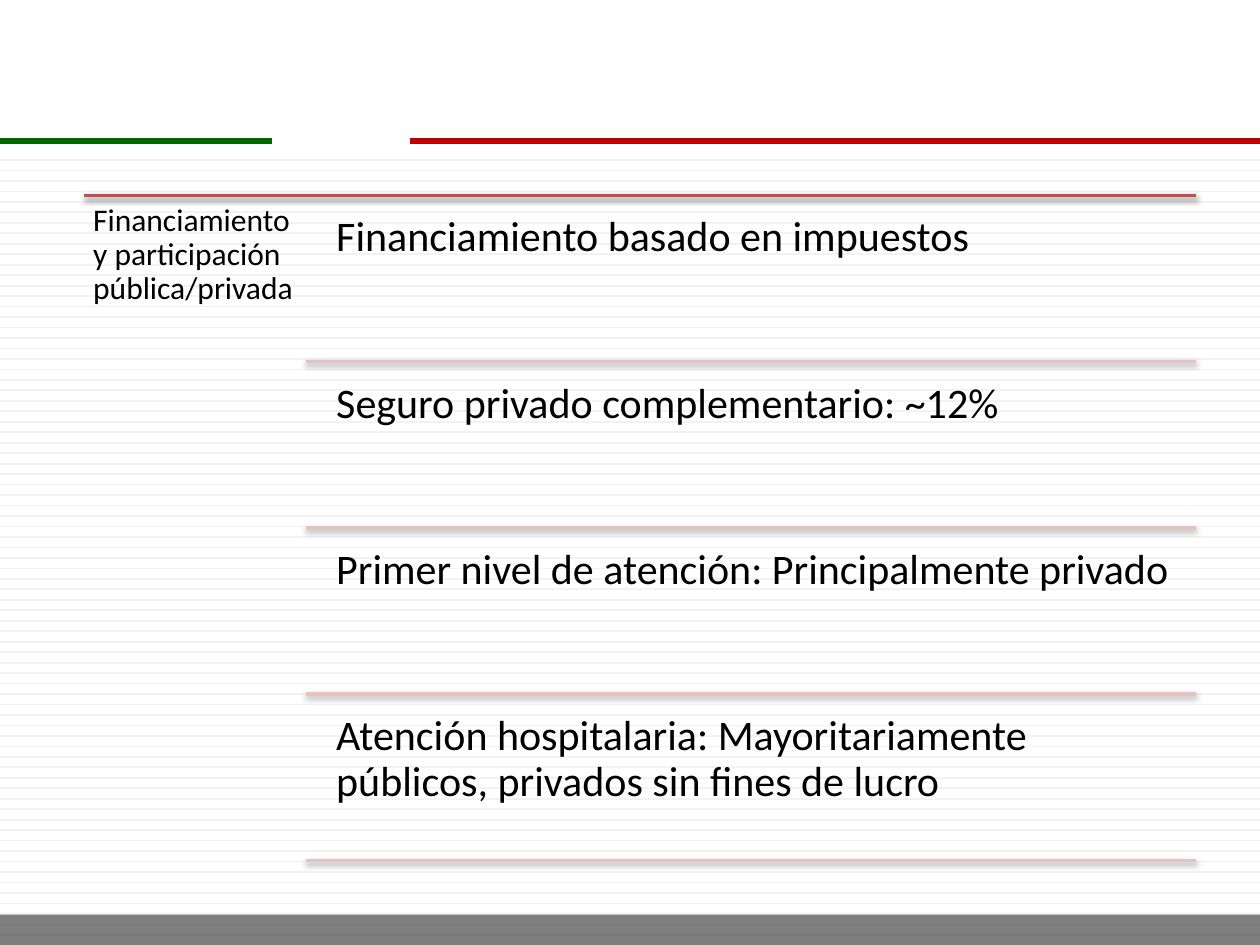
from dataclasses import dataclass

import pptx
import pptx.dml.color
import pptx.enum.shapes
import pptx.enum.text
import pptx.oxml
import pptx.oxml.ns
import pptx.util
from pptx.util import Inches


@dataclass(frozen=True)
class Theme:
    font: str = "Calibri"
    text: str = "000000"
    stripe: str = "F2F2F2"
    green: str = "006600"
    red: str = "C00000"
    top_rule: str = "C0504D"
    row_rule: str = "E2C2C2"
    label_size: int = 18
    row_size: int = 24


THEME = Theme()
SLIDE_WIDTH, SLIDE_HEIGHT = 10, 7.5
STRIPE_COUNT, FIRST_STRIPE, LAST_STRIPE = 75, 1.27, 7.42
TABLE_LEFT, TABLE_RIGHT, TABLE_TOP = 0.67, 9.49, 1.55
RULE_LEFT, ROW_LEFT = 2.43, 2.57
ROW_PITCH, ROW_HEIGHT, ROW_GAP = 1.32, 1.26, 0.06

LABEL = "Financiamiento y participación pública/privada"
ROWS = [
    "Financiamiento basado en impuestos",
    "Seguro privado complementario: ~12%",
    "Primer nivel de atención: Principalmente privado",
    "Atención hospitalaria: Mayoritariamente públicos, privados sin fines de lucro",
]

NAMESPACE = pptx.oxml.ns.nsdecls("a")
NO_EFFECT = f"<a:effectLst {NAMESPACE}/>"
SOFT_SHADOW = (
    f'<a:effectLst {NAMESPACE}>'
    '<a:outerShdw blurRad="40000" dist="20000" dir="5400000" rotWithShape="0">'
    '<a:srgbClr val="000000"><a:alpha val="38000"/></a:srgbClr>'
    '</a:outerShdw></a:effectLst>'
)


def rgb(color):
    return pptx.dml.color.RGBColor.from_string(color)


def add_rule(slide, left, right, top, color, width, effect=NO_EFFECT):
    """Draw a horizontal line."""
    rule = slide.shapes.add_connector(
        pptx.enum.shapes.MSO_CONNECTOR.STRAIGHT,
        Inches(left), Inches(top), Inches(right), Inches(top))
    rule.line.color.rgb = rgb(color)
    rule.line.width = pptx.util.Pt(width)
    rule._element.spPr.append(pptx.oxml.parse_xml(effect))


def add_text(slide, text, left, top, width, height, size, inset):
    box = slide.shapes.add_textbox(
        Inches(left), Inches(top), Inches(width), Inches(height))
    frame = box.text_frame
    frame.word_wrap = True
    frame.vertical_anchor = pptx.enum.text.MSO_ANCHOR.TOP
    frame.margin_left = frame.margin_right = Inches(inset)
    frame.margin_top = frame.margin_bottom = Inches(inset)
    frame.text = text
    paragraph = frame.paragraphs[0]
    paragraph.line_spacing = 0.9
    font = paragraph.runs[0].font
    font.name = THEME.font
    font.size = pptx.util.Pt(size)
    font.color.rgb = rgb(THEME.text)


def add_footer_band(slide):
    height = 0.24
    band = slide.shapes.add_shape(
        pptx.enum.shapes.MSO_SHAPE.RECTANGLE,
        0, Inches(SLIDE_HEIGHT - height), Inches(SLIDE_WIDTH), Inches(height))
    band.shadow.inherit = False
    band.line.fill.background()
    band.fill.solid()
    band.fill.fore_color.rgb = rgb(THEME.text)
    color = band._element.spPr.find(".//" + pptx.oxml.ns.qn("a:srgbClr"))
    color.append(pptx.oxml.parse_xml(f'<a:alpha {NAMESPACE} val="50000"/>'))


def add_background(slide):
    pitch = (LAST_STRIPE - FIRST_STRIPE) / (STRIPE_COUNT - 1)
    for index in range(STRIPE_COUNT):
        add_rule(slide, 0, SLIDE_WIDTH, FIRST_STRIPE + index * pitch, THEME.stripe, 1)
    add_footer_band(slide)
    add_rule(slide, 0, 2.16, 1.12, THEME.green, 3)
    add_rule(slide, 3.25, SLIDE_WIDTH, 1.12, THEME.red, 3)


def add_row(slide, index, text):
    top = TABLE_TOP + index * ROW_PITCH
    add_text(slide, text, ROW_LEFT, top + ROW_GAP, TABLE_RIGHT - ROW_LEFT,
             ROW_HEIGHT, THEME.row_size, 0.1)
    add_rule(slide, RULE_LEFT, TABLE_RIGHT, top + ROW_PITCH,
             THEME.row_rule, 2, SOFT_SHADOW)


def main():
    presentation = pptx.Presentation()
    presentation.slide_width = Inches(SLIDE_WIDTH)
    presentation.slide_height = Inches(SLIDE_HEIGHT)
    slide = presentation.slides.add_slide(presentation.slide_layouts[6])
    add_background(slide)
    add_rule(slide, TABLE_LEFT, TABLE_RIGHT, TABLE_TOP, THEME.top_rule, 2, SOFT_SHADOW)
    add_text(slide, LABEL, TABLE_LEFT, TABLE_TOP, RULE_LEFT - TABLE_LEFT,
             5.35, THEME.label_size, 0.07)
    for index, text in enumerate(ROWS):
        add_row(slide, index, text)
    presentation.save("out.pptx")


if __name__ == "__main__":
    main()
